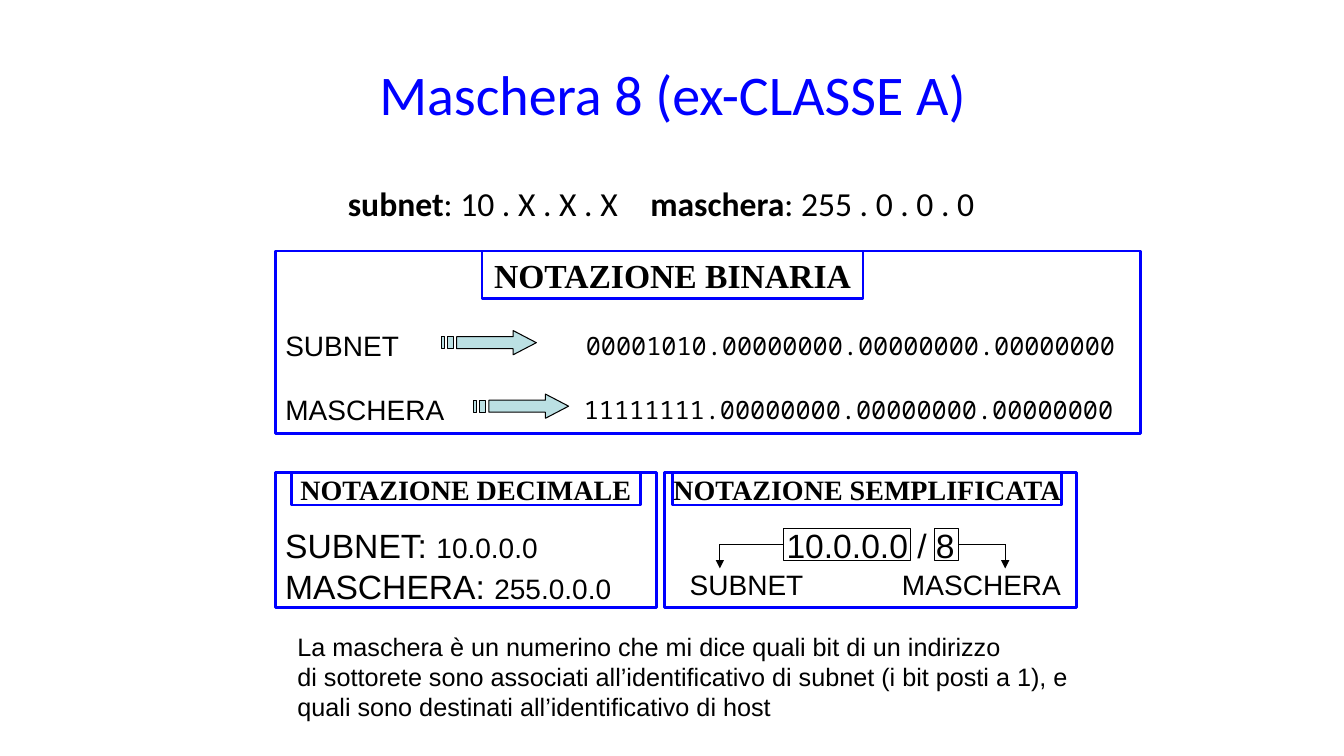
from pptx import Presentation
from pptx.dml.color import RGBColor as Rgb
from pptx.enum.shapes import MSO_CONNECTOR as Conn, MSO_SHAPE as Geo
from pptx.enum.text import MSO_ANCHOR as Anchor, MSO_AUTO_SIZE as Fit, PP_ALIGN as Align
from pptx.oxml.ns import qn
from pptx.util import Inches, Pt
from lxml.etree import SubElement

THEME = {
    "blue": Rgb.from_string("0000FF"),
    "black": Rgb.from_string("000000"),
    "aqua": Rgb.from_string("BBE0E3"),
    "title": ("Calibri", 40, False),
    "body": ("Calibri", 24, False),
    "strong": ("Calibri", 24, True),
    "head": ("Times New Roman", 24, True),
    "tag": ("Times New Roman", 20, True),
    "large": ("Arial", 24, False),
    "plain": ("Arial", 20, False),
    "note": ("Arial", 18, False),
    "code": ("Noto Sans Mono", 18, False),
}


def write(shape, lines, align=Align.LEFT, color="black", **opts):
    frame = shape.text_frame
    form = {"auto_size": Fit.NONE, "word_wrap": True, "vertical_anchor": Anchor.MIDDLE,
            "margin_left": 0, "margin_right": 0, "margin_top": 0, "margin_bottom": 0}
    for key, val in {**form, **opts}.items():
        setattr(frame, key, val)
    for i, line in enumerate(lines):
        par = frame.paragraphs[0] if i == 0 else frame.add_paragraph()
        par.alignment = align
        par.space_before = Pt(0)
        for text, style in line:
            run = par.add_run()
            run.text = text
            name, size, bold = THEME[style]
            for key, val in {"name": name, "size": Pt(size), "bold": bold}.items():
                setattr(run.font, key, val)
            run.font.color.rgb = THEME[color]


def frame_box(left, top, width, height, color="blue", line=2):
    box = slide.shapes.add_shape(Geo.RECTANGLE, *map(Inches, (left, top, width, height)))
    box.shadow.inherit = False
    box.fill.background()
    box.line.color.rgb = THEME[color]
    box.line.width = Pt(line)
    return box


deck = Presentation()
deck.slide_width, deck.slide_height = Inches(13.33), Inches(7.5)
slide = deck.slides.add_slide(deck.slide_layouts[1])

title, body = slide.placeholders
for shape, place in ((title, (0.67, 0.3, 12, 1.25)), (body, (3.45, 1.76, 7, 0.5))):
    for key, val in zip(("left", "top", "width", "height"), place):
        setattr(shape, key, Inches(val))
write(title, [[("Maschera 8 (ex-CLASSE A)", "title")]], Align.CENTER, "blue")

props = body.text_frame.paragraphs[0]._p.get_or_add_pPr()
props.set("marL", "0")
props.set("indent", "0")
SubElement(props, qn("a:buNone"))
tabs = SubElement(props, qn("a:tabLst"))
SubElement(tabs, qn("a:tab"), pos=str(Inches(3.22)), algn="l")
write(body, [[("subnet", "strong"), (": 10 . X . X . X\t", "body"),
              ("maschera", "strong"), (": 255 . 0 . 0 . 0", "body")]],
      vertical_anchor=Anchor.TOP, margin_top=Inches(0.05))

frame_box(2.73, 2.49, 8.58, 1.81)
dec = frame_box(2.73, 4.69, 3.78, 1.34)
write(dec, [[("SUBNET: ", "large"), ("10.0.0.0", "plain")],
            [("MASCHERA: ", "large"), ("255.0.0.0", "plain")]],
      vertical_anchor=Anchor.BOTTOM, margin_left=Inches(0.1), margin_bottom=Inches(0.02))
short = frame_box(6.59, 4.69, 4.09, 1.34)
write(short, [[("10.0.0.0 / 8", "large")]], Align.CENTER, margin_top=Inches(0.1))

for text, style, place in (
    ("NOTAZIONE BINARIA", "head", (4.78, 2.49, 3.78, 0.47)),
    ("NOTAZIONE DECIMALE", "tag", (2.89, 4.69, 3.46, 0.32)),
    ("NOTAZIONE SEMPLIFICATA", "tag", (6.67, 4.69, 3.86, 0.32)),
):
    write(frame_box(*place), [[(text, style)]], Align.CENTER, word_wrap=False)

head = [(0.71, 0), (0.71, 0.06), (0.15, 0.06), (0.15, 0.18), (0.71, 0.18), (0.71, 0.24), (0.94, 0.12)]
bars = [[(x, 0.06), (x, 0.18), (x + w, 0.18), (x + w, 0.06)] for x, w in ((0.06, 0.06), (0, 0.03))]
for left, top in ((4.38, 3.28), (4.7, 3.91)):
    path = [[(Inches(left + x), Inches(top + y)) for x, y in part] for part in (head, *bars)]
    form = slide.shapes.build_freeform(*path[0][0])
    form.add_line_segments(path[0][1:])
    for part in path[1:]:
        form.move_to(*part[0])
        form.add_line_segments(part[1:])
    arrow = form.convert_to_shape()
    arrow.shadow.inherit = False
    arrow.fill.solid()
    arrow.fill.fore_color.rgb = THEME["aqua"]
    arrow.line.color.rgb = THEME["black"]
    arrow.line.width = Pt(0.75)

for left, width, side, bend in ((7.77, 1.26, 1, 7.14), (9.27, 0.24, 3, 9.97)):
    cell = frame_box(left, 5.24, width, 0.32, "black", 0.75)
    edge = left if side == 1 else left + width
    for start, end in (((edge, 5.4), (bend, 5.4)), ((bend, 5.4), (bend, 5.64))):
        link = slide.shapes.add_connector(Conn.STRAIGHT, *map(Inches, (*start, *end)))
        link.line.color.rgb = THEME["black"]
        link.line.width = Pt(0.75)
        SubElement(link._element.spPr, qn("a:effectLst"))
        if start[0] == edge:
            link.begin_connect(cell, side)
        else:
            SubElement(link.line._get_or_add_ln(), qn("a:tailEnd"), type="triangle")

note = [
    "La maschera è un numerino che mi dice quali bit di un indirizzo",
    "di sottorete sono associati all’identificativo di subnet (i bit posti a 1), e",
    "quali sono destinati all’identificativo di host",
]
for lines, style, align, place in (
    (["SUBNET"], "plain", Align.LEFT, (2.83, 3.27, 1.5, 0.32)),
    (["00001010.00000000.00000000.00000000"], "code", Align.LEFT, (5.81, 3.27, 5.45, 0.32)),
    (["MASCHERA"], "plain", Align.LEFT, (2.83, 3.9, 1.8, 0.32)),
    (["11111111.00000000.00000000.00000000"], "code", Align.LEFT, (5.79, 3.9, 5.45, 0.32)),
    (["SUBNET"], "plain", Align.LEFT, (6.84, 5.64, 1.47, 0.31)),
    (["MASCHERA"], "plain", Align.CENTER, (8.87, 5.64, 1.73, 0.31)),
    (note, "note", Align.LEFT, (2.95, 6.21, 8, 1)),
):
    label = slide.shapes.add_textbox(*map(Inches, place))
    write(label, [[(line, style)] for line in lines], align)

deck.save("out.pptx")
